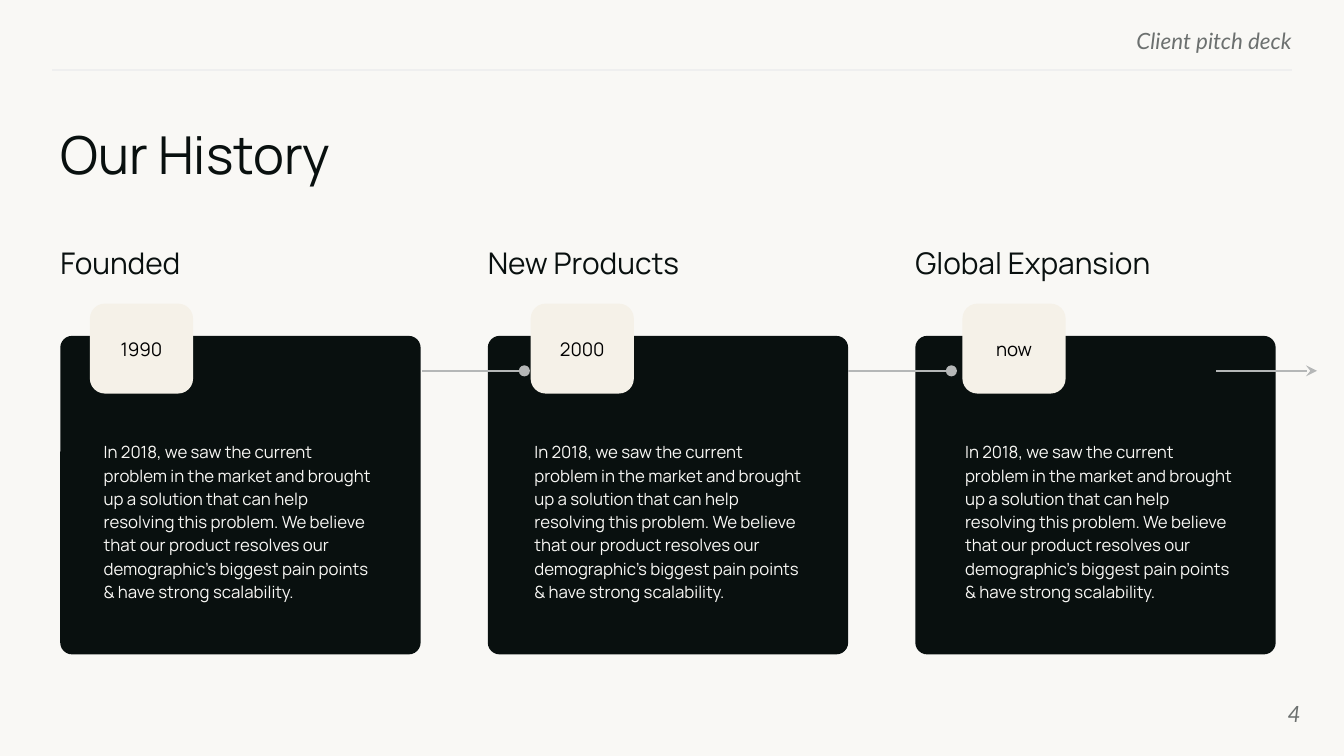
from pptx import Presentation
from pptx.dml.color import RGBColor
from pptx.enum.shapes import MSO_CONNECTOR, MSO_SHAPE
from pptx.enum.text import MSO_ANCHOR, MSO_AUTO_SIZE, PP_ALIGN
from pptx.oxml.ns import qn
from pptx.util import Cm, Pt
from lxml import etree

STRAIGHT = MSO_CONNECTOR.STRAIGHT
ROUND = MSO_SHAPE.ROUNDED_RECTANGLE
LEFT, MID, RIGHT = PP_ALIGN.LEFT, PP_ALIGN.CENTER, PP_ALIGN.RIGHT
TOP, CENTER = MSO_ANCHOR.TOP, MSO_ANCHOR.MIDDLE
FIXED, GROW = MSO_AUTO_SIZE.NONE, MSO_AUTO_SIZE.SHAPE_TO_FIT_TEXT

PAPER, INK, CREAM, BLACK = "F9F8F5", "09100F", "F5F1E8", "000000"
GRAY, RULE, ARROW = "6C706F", "EFEFEF", "B5B7B7"

EDGE, STEP, WIDE = 1.14, 8.08, 6.81
LINE_Y = 7.01
STORY = (
    "In 2018, we saw the current problem in the market and brought up a "
    "solution that can help resolving this problem. We believe that our "
    "product resolves our demographic’s biggest pain points & have strong "
    "scalability."
)
# heading, badge text, badge left
STAGES = [
    ("Founded", "1990", 1.7),
    ("New Products", "2000", 10.03),
    ("Global Expansion", "now", 18.19),
]
# start, end, arrowhead
LINKS = [
    (7.98, 9.91, "oval"),
    (16.03, 17.98, "oval"),
    (22.99, 24.89, "stealth"),
]


def color(code):
    return RGBColor.from_string(code)


class Deck:
    """Holds the fonts and the current slide."""

    font, note = "Manrope", "Lato"

    def __init__(self, wide, high):
        self.prs = Presentation()
        self.prs.slide_width, self.prs.slide_height = Cm(wide), Cm(high)
        self.slide = self.prs.slides.add_slide(self.prs.slide_layouts[5])
        fill = self.slide.background.fill
        fill.solid()
        fill.fore_color.rgb = color(PAPER)

    def label(self, shape, text, size, ink, font=None, italic=False,
              align=LEFT, anchor=TOP, pad=(0, 0), fit=FIXED, lead=None,
              after=None):
        """Fill a shape with one paragraph; pad is (sides, top and bottom)."""
        frame = shape.text_frame
        frame.word_wrap, frame.auto_size = True, fit
        frame.vertical_anchor = anchor
        frame.margin_left = frame.margin_right = Cm(pad[0])
        frame.margin_top = frame.margin_bottom = Cm(pad[1])
        para = frame.paragraphs[0]
        para.alignment = align
        if lead:
            para.line_spacing = lead
        if after:
            para.space_after = Pt(after)
        run = para.add_run()
        run.text = text
        run.font.name, run.font.size = font or self.font, Pt(size)
        run.font.italic = italic
        run.font.color.rgb = color(ink)

    def title(self, box, text):
        shape = self.slide.shapes.title
        shape.left, shape.top, shape.width, shape.height = map(Cm, box)
        self.label(shape, text, 28, INK, after=10)

    def text(self, box, text, size, ink, **style):
        shape = self.slide.shapes.add_textbox(*map(Cm, box))
        self.label(shape, text, size, ink, **style)

    def aside(self, box, text, anchor=TOP):
        self.text(box, text, 12, GRAY, font=self.note, italic=True,
                  align=RIGHT, anchor=anchor)

    def panel(self, box, fill, curve):
        shape = self.slide.shapes.add_shape(ROUND, *map(Cm, box))
        shape.adjustments[0] = curve
        shape.shadow.inherit = False
        shape.fill.solid()
        shape.fill.fore_color.rgb = color(fill)
        shape.line.fill.background()
        return shape

    def badge(self, box, text):
        shape = self.panel(box, CREAM, 0.167)
        self.label(shape, text, 10, BLACK, align=MID, anchor=CENTER,
                   pad=(0.25, 0.25))

    def line(self, start, end, y, ink, width, head=None):
        link = self.slide.shapes.add_connector(
            STRAIGHT, Cm(start), Cm(y), Cm(end), Cm(y))
        link.line.color.rgb = color(ink)
        link.line.width = Pt(width)
        props = link._element.spPr
        if head:
            tail = etree.SubElement(props.find(qn("a:ln")), qn("a:tailEnd"))
            tail.set("type", head)
        etree.SubElement(props, qn("a:effectLst"))


def main():
    deck = Deck(25.4, 14.29)
    deck.line(0.99, 24.41, 1.32, RULE, 0.75)
    deck.aside((14.63, 0.51, 9.78, 0.46), "Client pitch deck")
    deck.title((EDGE, 2.31, 23.44, 1.3), "Our History")

    for i, (head, _, _) in enumerate(STAGES):
        left = EDGE + i * STEP
        deck.panel((left, 6.35, WIDE, 6.02), INK, 0.037)
        deck.text((left, 4.62, WIDE, 0.61), head, 16, INK)
        deck.text((1.78 + i * 8.14, 8.2, 5.56, 3.68), STORY, 9, PAPER,
                  pad=(0.18, 0.1), fit=GROW, lead=1.15)
    for start, end, head in LINKS:
        deck.line(start, end, LINE_Y, ARROW, 1, head)
    for _, year, left in STAGES:
        deck.badge((left, 5.74, 1.95, 1.7), year)

    deck.aside((23.06, 12.95, 1.52, 1.09), "4", CENTER)
    deck.prs.save("out.pptx")


if __name__ == "__main__":
    main()
